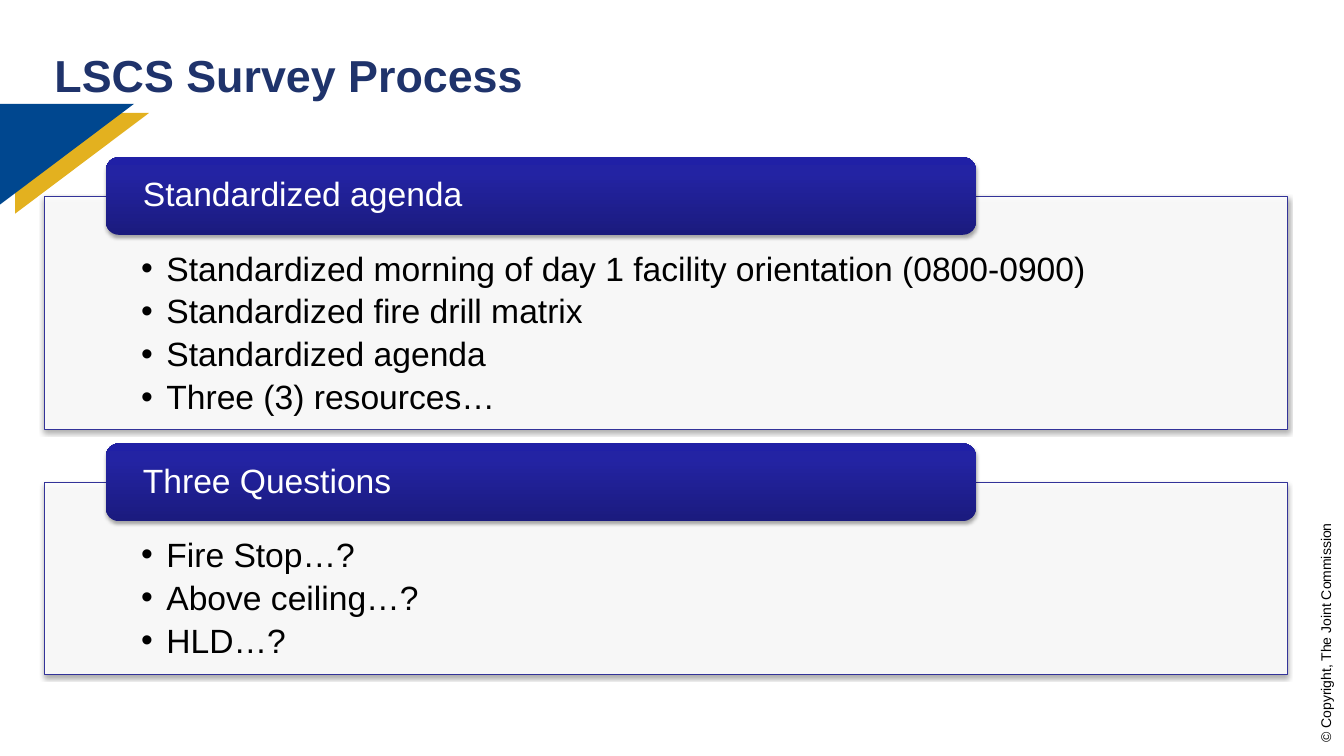
from lxml.etree import SubElement
from pptx import Presentation
from pptx.dml.color import RGBColor
from pptx.enum.shapes import MSO_SHAPE
from pptx.enum.text import MSO_ANCHOR, MSO_AUTO_SIZE, PP_ALIGN
from pptx.oxml.ns import qn
from pptx.util import Inches, Pt

TITLE = "LSCS Survey Process"
COPYRIGHT = "© Copyright, The Joint Commission"
SECTIONS = [
    ("Standardized agenda", [
        "Standardized morning of day 1 facility orientation (0800-0900)",
        "Standardized fire drill matrix",
        "Standardized agenda",
        "Three (3) resources…",
    ]),
    ("Three Questions", ["Fire Stop…?", "Above ceiling…?", "HLD…?"]),
]
TRIANGLES = [(0.15, 1.12, "E3B11F"), (0, 1.03, "00478F")]
TAB_GRADIENT = [(0, "1B1B7E"), (80, "2323A3"), (100, "2020A6")]

WIDTH, HEIGHT = 13.33, 7.5
MARGIN = 0.44
CONTENT_WIDTH = 12.33
FIRST_PANEL_TOP, PANEL_GAP = 1.95, 0.53
PANEL_PADDING, LINE_PITCH = 0.67, 0.41
TAB_LEFT, TAB_WIDTH, TAB_HEIGHT, TAB_RISE = 1.05, 8.63, 0.77, 0.39


def color(value):
    return RGBColor.from_string(value)


def place(shape, left, top, width, height):
    shape.left, shape.top = Inches(left), Inches(top)
    shape.width, shape.height = Inches(width), Inches(height)


def style_frame(frame, anchor, side=0.1, top=0.05, bottom=0.05):
    frame.word_wrap = True
    frame.auto_size = MSO_AUTO_SIZE.NONE
    frame.vertical_anchor = anchor
    frame.margin_left = frame.margin_right = Inches(side)
    frame.margin_top, frame.margin_bottom = Inches(top), Inches(bottom)


def style_text(para, size, value, bold=False):
    para.alignment = PP_ALIGN.LEFT
    para.space_before = Pt(0)
    para.font.name, para.font.size = "Arial", Pt(size)
    para.font.bold = bold
    para.font.color.rgb = color(value)


def add_shadow(shape):
    shape.shadow.inherit = False
    effects = shape.element.spPr.find(qn("a:effectLst"))
    shadow = SubElement(effects, qn("a:outerShdw"), blurRad=str(Pt(3.1)),
                        dist=str(Pt(1.8)), dir="5400000", rotWithShape="0")
    black = SubElement(shadow, qn("a:srgbClr"), val="000000")
    SubElement(black, qn("a:alpha"), val="35000")


def add_triangle(slide, left, top, value):
    builder = slide.shapes.build_freeform(Inches(left), Inches(top))
    builder.add_line_segments([(Inches(left + 1.33), Inches(top)),
                               (Inches(left), Inches(top + 1))], close=True)
    triangle = builder.convert_to_shape()
    triangle.shadow.inherit = False
    triangle.fill.solid()
    triangle.fill.fore_color.rgb = color(value)
    triangle.line.fill.background()


def add_panel(slide, body, items, top, height):
    area = (MARGIN, top, CONTENT_WIDTH, height)
    panel = slide.shapes.add_shape(MSO_SHAPE.RECTANGLE, *map(Inches, area))
    panel.fill.solid()
    panel.fill.fore_color.rgb = color("FFFFFF")
    white = panel.element.spPr.find(".//" + qn("a:srgbClr"))
    SubElement(white, qn("a:alpha"), val="90000")
    panel.line.color.rgb = color("333399")
    panel.line.width = Pt(0.75)
    add_shadow(panel)

    panel.element.addnext(body.element)
    place(body, *area)
    style_frame(body.text_frame, MSO_ANCHOR.TOP, 0.96, 0.55, 0.19)
    body.text_frame.text = "\n".join(items)
    for para in body.text_frame.paragraphs:
        properties = para._p.get_or_add_pPr()
        properties.set("marL", str(Inches(0.25)))
        properties.set("indent", str(Inches(-0.25)))
        SubElement(properties, qn("a:buChar"), char="•")
        style_text(para, 24, "000000")
        para.line_spacing = 0.9
        para.space_after = Pt(4.7)


def add_tab(slide, heading, top):
    tab = slide.shapes.add_shape(
        MSO_SHAPE.ROUNDED_RECTANGLE,
        *map(Inches, (TAB_LEFT, top, TAB_WIDTH, TAB_HEIGHT)))
    tab.fill.gradient()
    tab.fill.gradient_angle = 90
    stops = tab.element.spPr.find(".//" + qn("a:gsLst"))
    for stop in list(stops):
        stops.remove(stop)
    for position, value in TAB_GRADIENT:
        stop = SubElement(stops, qn("a:gs"), pos=str(position * 1000))
        SubElement(stop, qn("a:srgbClr"), val=value)
    tab.line.fill.background()
    add_shadow(tab)
    style_frame(tab.text_frame, MSO_ANCHOR.MIDDLE, 0.33, 0, 0)
    tab.text_frame.text = heading
    para = tab.text_frame.paragraphs[0]
    style_text(para, 24, "FFFFFF")
    para.line_spacing = 0.9


def add_copyright(slide):
    box = slide.shapes.add_textbox(*map(Inches, (11.95, 6.13, 2.4, 0.27)))
    box.rotation = 270
    box.text_frame.text = COPYRIGHT
    box.text_frame.word_wrap = False
    style_text(box.text_frame.paragraphs[0], 10, "000000")


def main():
    deck = Presentation()
    deck.slide_width, deck.slide_height = Inches(WIDTH), Inches(HEIGHT)
    slide = deck.slides.add_slide(deck.slide_layouts.get_by_name("Two Content"))
    title, *bodies = list(slide.placeholders)

    add_copyright(slide)
    for triangle in TRIANGLES:
        add_triangle(slide, *triangle)

    slide.shapes[-1].element.addnext(title.element)
    place(title, MARGIN, 0.18, CONTENT_WIDTH, 1.13)
    style_frame(title.text_frame, MSO_ANCHOR.MIDDLE)
    title.text_frame.text = TITLE
    style_text(title.text_frame.paragraphs[0], 32, "1F336B", bold=True)

    top = FIRST_PANEL_TOP
    for body, (heading, items) in zip(bodies, SECTIONS):
        height = PANEL_PADDING + LINE_PITCH * len(items)
        add_panel(slide, body, items, top, height)
        add_tab(slide, heading, top - TAB_RISE)
        top += height + PANEL_GAP

    deck.save("out.pptx")


if __name__ == "__main__":
    main()
